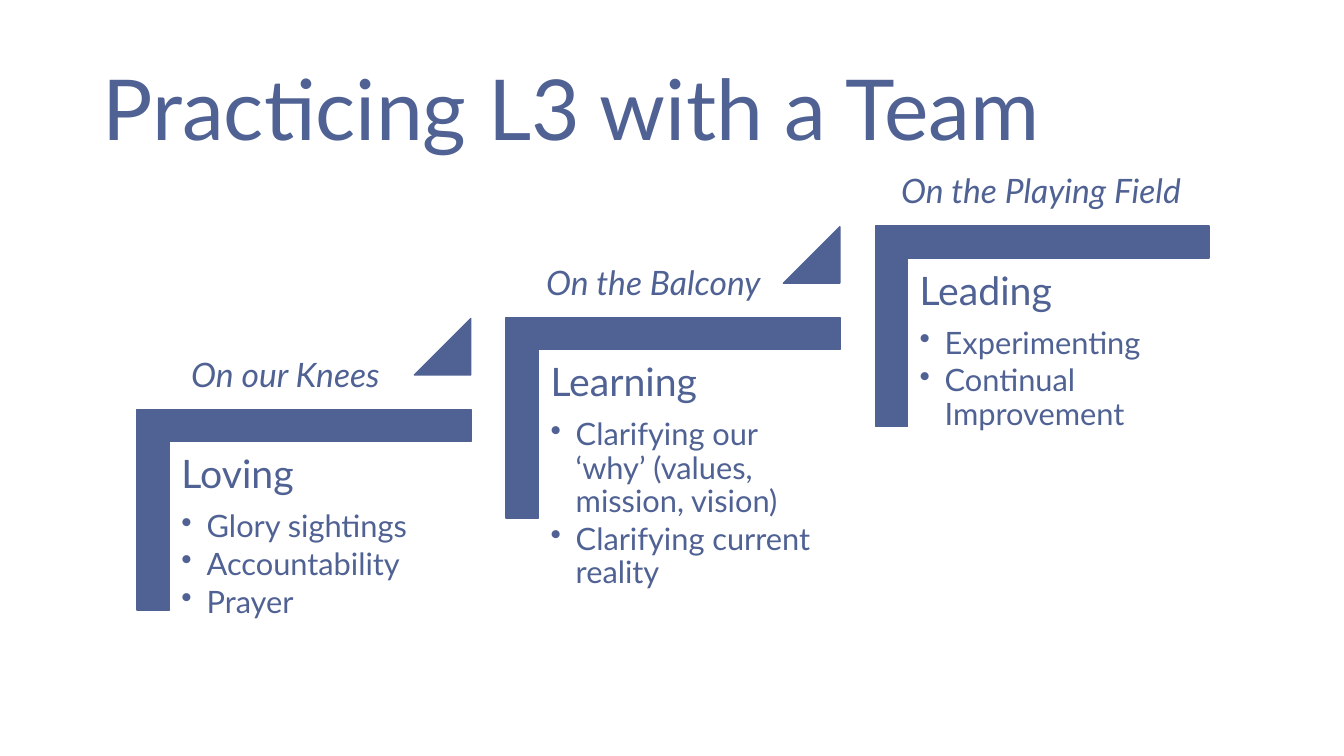
import pptx
import pptx.util
import pptx.dml.color
import pptx.enum.shapes
import pptx.enum.text
import pptx.oxml.ns
import lxml.etree

# Content: heading, bullets, label, label offset and width
TITLE = "Practicing L3 with a Team"
STEPS = [
    ("Loving", ["Glory sightings", "Accountability", "Prayer"],
     "On our Knees", -29, 288),
    ("Learning", ["Clarifying our ‘why’ (values, mission, vision)",
                  "Clarifying current reality"],
     "On the Balcony", -30, 288),
    ("Leading", ["Experimenting", "Continual Improvement"],
     "On the Playing Field", -44, 353),
]


class Theme:
    font = "Lato"
    blue = pptx.dml.color.RGBColor.from_string("506294")
    title, head, label, item = 60, 28, 24, 22


# Geometry: 100 px to the inch
SCALE = 9144
WIDE, HIGH = 1333, 750
LEFT, TOP = 168, 439      # text corner of the lowest step
RUN, RISE = 366, 91       # from one step to the next

SHAPE = pptx.enum.shapes.MSO_SHAPE
ALIGN = pptx.enum.text.PP_ALIGN
ANCHOR = pptx.enum.text.MSO_ANCHOR


def px(*nums):
    return [pptx.util.Emu(n * SCALE) for n in nums]


def add_box(slide, area, inset=None):
    frame = slide.shapes.add_textbox(*px(*area)).text_frame
    frame.word_wrap = True
    if inset is not None:
        pad = px(inset)[0]
        frame.margin_left = frame.margin_right = pad
        frame.margin_top = frame.margin_bottom = pad
    return frame


def add_run(para, text, size, italic=False):
    run = para.add_run()
    run.text = text
    run.font.name = Theme.font
    run.font.size = pptx.util.Pt(size)
    run.font.italic = italic
    run.font.color.rgb = Theme.blue


def add_mark(slide, kind, area, ratios):
    shape = slide.shapes.add_shape(kind, *px(*area))
    shape.shadow.inherit = False
    shape.fill.solid()
    shape.fill.fore_color.rgb = Theme.blue
    shape.line.color.rgb = Theme.blue
    shape.line.width = pptx.util.Pt(1)
    for i, ratio in enumerate(ratios):
        shape.adjustments[i] = ratio
    return shape


def add_dot(para):
    props = para._p.get_or_add_pPr()
    indent = px(25)[0]
    props.set("marL", str(indent))
    props.set("indent", str(-indent))
    dot = lxml.etree.SubElement(props, pptx.oxml.ns.qn("a:buChar"))
    dot.set("char", "•")


def add_step(slide, x, y, head, items, label, shift, width):
    # Angle bracket, turned to open to the lower right
    angle = add_mark(slide, SHAPE.CORNER, (x + 34, y - 99, 199, 331),
                     (0.16, 0.16))
    angle.rotation = 90

    # Heading and bullets
    frame = add_box(slide, (x, y, 299, 262), 12)
    para = frame.paragraphs[0]
    para.line_spacing = 0.9
    para.space_after = pptx.util.Pt(10)
    add_run(para, head, Theme.head)
    for item in items:
        para = frame.add_paragraph()
        add_dot(para)
        para.line_spacing = 0.9
        para.space_after = pptx.util.Pt(3.3)
        add_run(para, item, Theme.item)

    # Label above the bracket
    frame = add_box(slide, (x + shift, y - 93, width, 50))
    para = frame.paragraphs[0]
    para.alignment = ALIGN.CENTER
    add_run(para, label, Theme.label, italic=True)


def main():
    deck = pptx.Presentation()
    deck.slide_width, deck.slide_height = px(WIDE, HIGH)
    slide = deck.slides.add_slide(deck.slide_layouts[6])

    # Title
    frame = add_box(slide, (92, 40, 1150, 145))
    frame.vertical_anchor = ANCHOR.MIDDLE
    para = frame.paragraphs[0]
    para.line_spacing = 0.9
    add_run(para, TITLE, Theme.title)

    # Rising steps, with a triangle leading up to the next one
    for i, step in enumerate(STEPS):
        x, y = LEFT + i * RUN, TOP - i * RISE
        add_step(slide, x, y, *step)
        if i < len(STEPS) - 1:
            add_mark(slide, SHAPE.ISOSCELES_TRIANGLE,
                     (x + 243, y - 123, 56, 56), (1,))

    deck.save("out.pptx")


if __name__ == "__main__":
    main()
